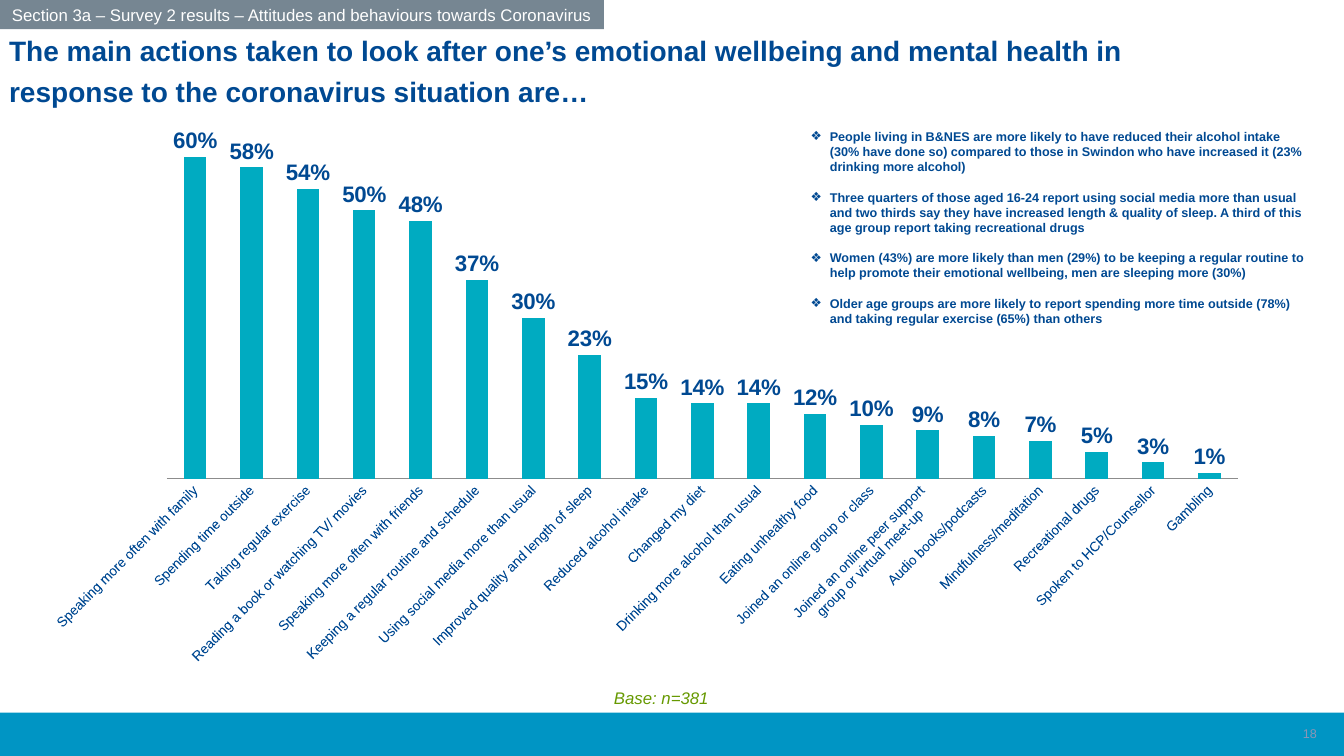
from dataclasses import dataclass
from typing import Any, Optional

from lxml import etree
from pptx import Presentation
from pptx import util as u
from pptx.chart.data import CategoryChartData
from pptx.dml.color import RGBColor
from pptx.enum import chart as ch, shapes, text
from pptx.oxml import ns


@dataclass(frozen=True)
class Theme:
    font: str = "Arial"
    navy: str = "004992"
    teal: str = "00ABC1"
    blue: str = "0095C4"
    grey: str = "768692"
    axis: str = "8C8C8C"
    green: str = "669900"
    muted: str = "8C95B6"
    title: float = 20
    value: float = 16
    label: float = 12
    category: float = 10
    small: float = 9


@dataclass(frozen=True)
class Box:
    left: float
    top: float
    width: float
    height: float

    def lengths(self) -> tuple:
        return tuple(u.Inches(v) for v in (self.left, self.top, self.width, self.height))


@dataclass(frozen=True)
class Bar:
    box: Box
    fill: str
    caption: Optional[str] = None


@dataclass(frozen=True)
class Note:
    box: Box
    caption: str
    color: str
    size: float
    align: Any
    anchor: Any
    wrap: bool = True
    italic: bool = False


T = Theme()

TITLE = ("The main actions taken to look after one’s emotional wellbeing and mental "
         "health in response to the coronavirus situation are…")

BARS = [
    Bar(Box(0, 7.07, 13.33, 0.43), T.blue),
    Bar(Box(0, 0, 5.99, 0.29), T.grey,
        "Section 3a – Survey 2 results – Attitudes and behaviours towards Coronavirus"),
]

NOTES = [
    Note(Box(10.16, 7.08, 3, 0.4), "18", T.muted, T.small,
         text.PP_ALIGN.RIGHT, text.MSO_ANCHOR.MIDDLE),
    Note(Box(5.99, 6.77, 1.15, 0.3), "Base: n=381", T.green, T.label,
         text.PP_ALIGN.LEFT, text.MSO_ANCHOR.TOP, wrap=False, italic=True),
]

FINDINGS = [
    "People living in B&NES are more likely to have reduced their alcohol intake (30% have "
    "done so) compared to those in Swindon who have increased it (23% drinking more alcohol)",
    "Three quarters of those aged 16-24 report using social media more than usual and two "
    "thirds say they have increased length & quality of sleep. A third of this age group "
    "report taking recreational drugs",
    "Women (43%) are more likely than men (29%) to be keeping a regular routine to help "
    "promote their emotional wellbeing, men are sleeping more (30%)",
    "Older age groups are more likely to report spending more time outside (78%) and taking "
    "regular exercise (65%) than others",
]

ACTIONS = {
    "Speaking more often with family": 0.6,
    "Spending time outside": 0.58,
    "Taking regular exercise": 0.54,
    "Reading a book or watching TV/ movies": 0.5,
    "Speaking more often with friends": 0.48,
    "Keeping a regular routine and schedule": 0.37,
    "Using social media more than usual": 0.3,
    "Improved quality and length of sleep": 0.23,
    "Reduced alcohol intake": 0.15,
    "Changed my diet": 0.14,
    "Drinking more alcohol than usual": 0.14,
    "Eating unhealthy food": 0.12,
    "Joined an online group or class": 0.1,
    "Joined an online peer support\ngroup or virtual meet-up": 0.09,
    "Audio books/podcasts": 0.08,
    "Mindfulness/meditation": 0.07,
    "Recreational drugs": 0.05,
    "Spoken to HCP/Counsellor": 0.03,
    "Gambling": 0.01,
}


def apply(target: Any, values: dict) -> None:
    for name, value in values.items():
        setattr(target, name, value)


def style(font: Any, color: str, size: float, bold: bool = False, italic: bool = False) -> None:
    apply(font, {"name": T.font, "size": u.Pt(size), "bold": bold, "italic": italic})
    font.color.rgb = RGBColor.from_string(color)


def place(sp: Any, box: Box) -> None:
    apply(sp, dict(zip(("left", "top", "width", "height"), box.lengths())))


def add_bar(s: Any, bar: Bar) -> None:
    sp = s.shapes.add_shape(shapes.MSO_SHAPE.RECTANGLE, *bar.box.lengths())
    sp.shadow.inherit = False
    sp.fill.solid()
    sp.fill.fore_color.rgb = RGBColor.from_string(bar.fill)
    sp.line.fill.background()
    if bar.caption:
        tf = sp.text_frame
        apply(tf, {"text": bar.caption, "vertical_anchor": text.MSO_ANCHOR.MIDDLE})
        tf.paragraphs[0].alignment = text.PP_ALIGN.CENTER
        style(tf.paragraphs[0].runs[0].font, "FFFFFF", T.label)


def add_note(s: Any, note: Note) -> None:
    tf = s.shapes.add_textbox(*note.box.lengths()).text_frame
    apply(tf, {"text": note.caption, "word_wrap": note.wrap, "vertical_anchor": note.anchor})
    p = tf.paragraphs[0]
    p.alignment = note.align
    style(p.runs[0].font, note.color, note.size, italic=note.italic)


def fill_title(sp: Any) -> None:
    place(sp, Box(-0.15, 0.22, 12.59, 1.09))
    tf = sp.text_frame
    apply(tf, {"text": TITLE, "word_wrap": True, "auto_size": text.MSO_AUTO_SIZE.NONE,
               "vertical_anchor": text.MSO_ANCHOR.TOP,
               "margin_left": u.Inches(0.24), "margin_right": u.Inches(0.24)})
    p = tf.paragraphs[0]
    apply(p, {"alignment": text.PP_ALIGN.LEFT, "line_spacing": 1.2, "space_before": u.Pt(0)})
    style(p.runs[0].font, T.navy, T.title, bold=True)


def fill_findings(sp: Any) -> None:
    place(sp, Box(7.94, 1.23, 5.11, 2.37))
    tf = sp.text_frame
    apply(tf, {"word_wrap": True, "auto_size": text.MSO_AUTO_SIZE.NONE,
               "vertical_anchor": text.MSO_ANCHOR.TOP})
    for i, finding in enumerate(FINDINGS):
        p = tf.add_paragraph() if i else tf.paragraphs[0]
        pPr = p._p.get_or_add_pPr()
        apply_indent = {"marL": u.Inches(0.19), "indent": -u.Inches(0.19)}
        for name, value in apply_indent.items():
            pPr.set(name, str(int(value)))
        etree.SubElement(pPr, ns.qn("a:buFont"), typeface=T.font)
        etree.SubElement(pPr, ns.qn("a:buChar"), char="❖")
        apply(p, {"line_spacing": 1.0, "space_before": u.Pt(10.8 if i else 0)})
        r = p.add_run()
        r.text = finding
        style(r.font, T.navy, T.small, bold=True)


def add_actions_chart(s: Any) -> None:
    data = CategoryChartData(number_format="0%")
    data.categories = list(ACTIONS)
    data.add_series("Series 1", list(ACTIONS.values()))
    chart = s.shapes.add_chart(ch.XL_CHART_TYPE.COLUMN_CLUSTERED,
                               *Box(0.53, 1.01, 11.75, 5.77).lengths(), data).chart
    apply(chart, {"has_legend": False, "has_title": False})
    style(chart.font, T.navy, 18)

    plot = chart.plots[0]
    apply(plot, {"gap_width": 150, "vary_by_categories": False, "has_data_labels": True})
    fill = plot.series[0].format.fill
    fill.solid()
    fill.fore_color.rgb = RGBColor.from_string(T.teal)
    labels = plot.data_labels
    apply(labels, {"show_value": True, "number_format": "0%", "number_format_is_linked": False,
                   "position": ch.XL_LABEL_POSITION.OUTSIDE_END})
    style(labels.font, T.navy, T.value, bold=True)

    apply(chart.value_axis, {"visible": False, "has_major_gridlines": False,
                             "minimum_scale": 0, "maximum_scale": 0.7})
    axis = chart.category_axis
    axis.major_tick_mark = ch.XL_TICK_MARK.NONE
    axis.format.line.color.rgb = RGBColor.from_string(T.axis)
    axis.format.line.width = u.Pt(0.75)
    style(axis.tick_labels.font, T.navy, T.category)
    axis._element.txPr.find(ns.qn("a:bodyPr")).set("rot", "-2700000")

    area = chart._chartSpace.chart.plotArea
    for old in area.findall(ns.qn("c:layout")):
        area.remove(old)
    layout = etree.Element(ns.qn("c:layout"))
    area.insert(0, layout)
    manual = etree.SubElement(layout, ns.qn("c:manualLayout"))
    for tag, value in (("layoutTarget", "inner"), ("xMode", "edge"), ("yMode", "edge"),
                       ("x", "0.092"), ("y", "0.002"), ("w", "0.908"), ("h", "0.646")):
        etree.SubElement(manual, ns.qn(f"c:{tag}"), val=value)


def main() -> None:
    prs = Presentation()
    apply(prs, {"slide_width": u.Inches(13.33), "slide_height": u.Inches(7.5)})
    s = prs.slides.add_slide(prs.slide_layouts[1])
    body = s.placeholders[1]
    fill_title(s.shapes.title)
    for bar in BARS:
        add_bar(s, bar)
    for note in NOTES:
        add_note(s, note)
    add_actions_chart(s)
    fill_findings(body)
    s.shapes._spTree.append(body._element)
    prs.save("out.pptx")


if __name__ == "__main__":
    main()
